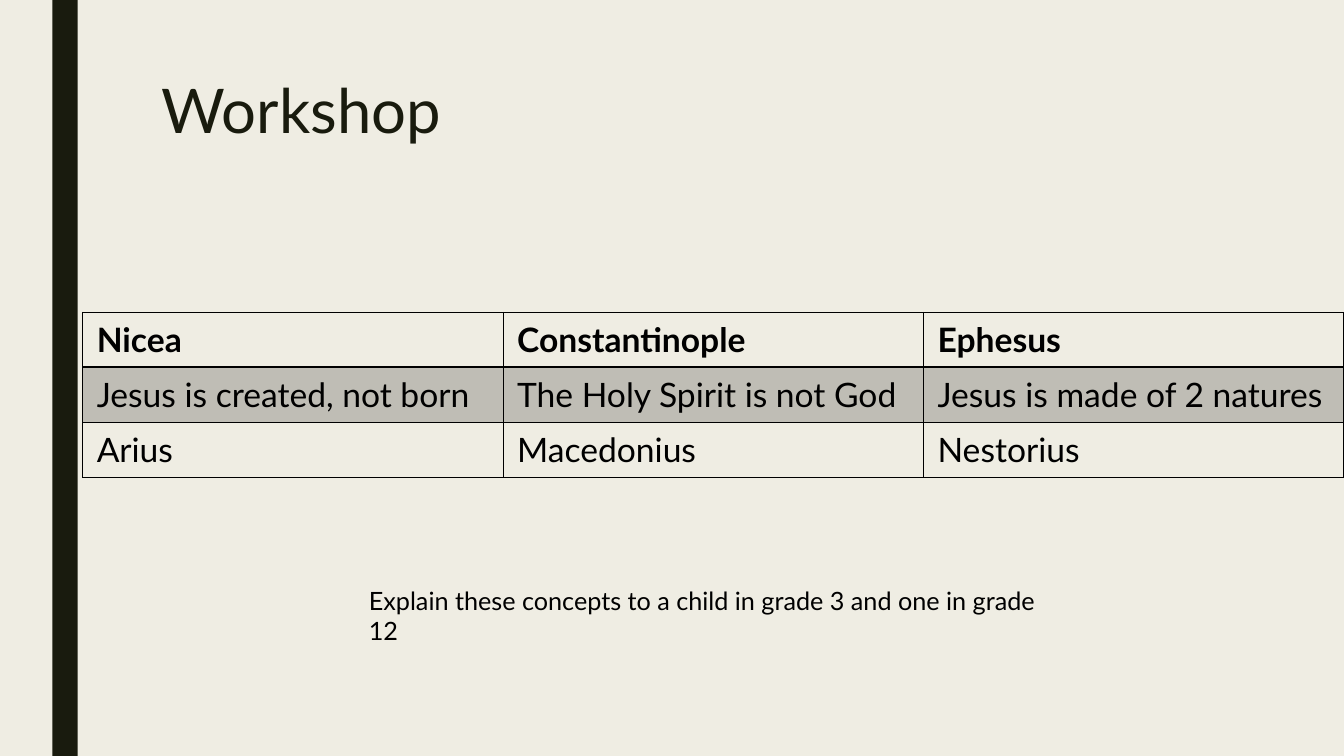
from lxml import etree
from pptx import Presentation
from pptx.dml.color import RGBColor
from pptx.enum import shapes, text
from pptx.oxml import ns
from pptx.util import Inches, Pt

FONT = "Lato"
PAPER, DARK, BLACK = "EFEDE3", "191B0E", "000000"
COUNCILS = [
    ["Nicea", "Constantinople", "Ephesus"],
    ["Jesus is created, not born", "The Holy Spirit is not God", "Jesus is made of 2 natures"],
    ["Arius", "Macedonius", "Nestorius"],
]


def color(value):
    return RGBColor.from_string(value)


def add_child(parent, tag, **attributes):
    return etree.SubElement(parent, ns.qn(tag), attributes)


class SlideBuilder:
    """Holds the font and the current slide."""

    def __init__(self, slide, font):
        self.slide = slide
        self.font = font

    def background(self, fill):
        self.slide.background.fill.solid()
        self.slide.background.fill.fore_color.rgb = color(fill)

    def set_text(self, frame, words, size, ink, bold=False):
        frame.text = words
        paragraph = frame.paragraphs[0]
        paragraph.alignment = text.PP_ALIGN.LEFT
        paragraph.font.name = self.font
        paragraph.font.size = Pt(size)
        paragraph.font.bold = bold
        paragraph.font.color.rgb = color(ink)
        return paragraph

    def bar(self, left, top, width, height, fill):
        shape = self.slide.shapes.add_shape(
            shapes.MSO_SHAPE.RECTANGLE, Inches(left), Inches(top), Inches(width), Inches(height))
        shape.shadow.inherit = False
        shape.fill.solid()
        shape.fill.fore_color.rgb = color(fill)
        shape.line.fill.background()

    def title(self, words, left, top, width, height):
        shape = self.slide.shapes.title
        shape.left, shape.top = Inches(left), Inches(top)
        shape.width, shape.height = Inches(width), Inches(height)
        frame = shape.text_frame
        frame.vertical_anchor = text.MSO_ANCHOR.TOP
        frame.auto_size = text.MSO_AUTO_SIZE.NONE
        self.set_text(frame, words, 44, DARK).line_spacing = 0.89

    def text_box(self, words, left, top, width, height):
        shape = self.slide.shapes.add_textbox(
            Inches(left), Inches(top), Inches(width), Inches(height))
        shape.text_frame.word_wrap = True
        self.set_text(shape.text_frame, words, 18, BLACK)

    def table(self, rows, left, top, column_width, row_heights):
        shape = self.slide.shapes.add_table(
            len(rows), len(rows[0]), Inches(left), Inches(top),
            Inches(column_width * len(rows[0])), Inches(sum(row_heights)))
        table = shape.table
        for column in table.columns:
            column.width = Inches(column_width)
        for index, (row, height) in enumerate(zip(rows, row_heights)):
            table.rows[index].height = Inches(height)
            for position, words in enumerate(row):
                self.cell(table.cell(index, position), words, index)

    def cell(self, cell, words, row):
        cell.margin_left = cell.margin_right = Inches(0.14)
        cell.margin_top = cell.margin_bottom = Inches(0.07)
        self.set_text(cell.text_frame, words, 24, BLACK, bold=row == 0)
        widths = {"L": 1, "R": 1, "T": 2 if row == 1 else 1, "B": 2 if row == 0 else 1}
        properties = cell._tc.get_or_add_tcPr()
        for side, width in widths.items():
            line = add_child(properties, f"a:ln{side}", w=str(Pt(width)))
            add_child(add_child(line, "a:solidFill"), "a:srgbClr", val=BLACK)
        if row == 1:
            cell.fill.solid()
            cell.fill.fore_color.rgb = color(BLACK)
            shade = properties.find(ns.qn("a:solidFill"))
            add_child(shade[0], "a:alpha", val="20000")
        else:
            cell.fill.background()


def main():
    presentation = Presentation()
    presentation.slide_width, presentation.slide_height = Inches(13.33), Inches(7.5)
    slide = presentation.slides.add_slide(presentation.slide_layouts[5])
    builder = SlideBuilder(slide, FONT)
    builder.background(PAPER)
    builder.bar(0.52, 0, 0.25, 7.5, DARK)
    builder.title("Workshop", 1.5, 0.75, 10.5, 1.62)
    builder.table(COUNCILS, 0.82, 3.1, 4.17, [0.41, 0.55, 0.55])
    builder.text_box("Explain these concepts to a child in grade 3 and one in grade 12",
                     3.56, 5.76, 7.05, 0.4)
    presentation.save("out.pptx")


if __name__ == "__main__":
    main()
